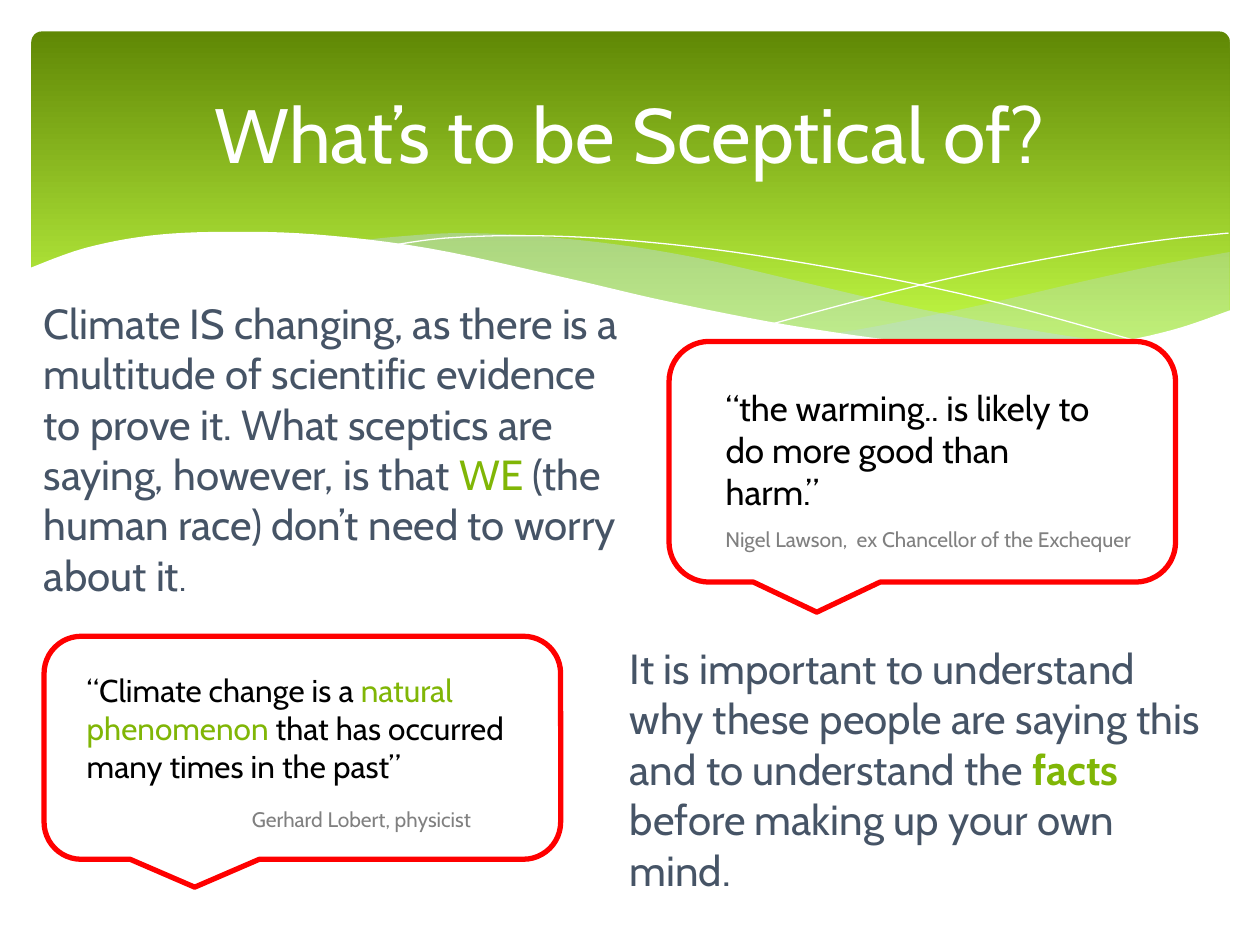
from pptx import Presentation
from pptx.dml.color import RGBColor
from pptx.enum.shapes import MSO_SHAPE as Shape
from pptx.enum.text import MSO_ANCHOR as Anchor, MSO_AUTO_SIZE as AutoSize, PP_ALIGN as Align
from pptx.oxml.ns import qn
from pptx.util import Inches, Pt
from lxml.etree import SubElement

WHITE = RGBColor(0xFF, 0xFF, 0xFF)
BLACK = RGBColor(0x00, 0x00, 0x00)
GREY = RGBColor(0x80, 0x80, 0x80)
SLATE = RGBColor(0x46, 0x54, 0x66)
GREEN = RGBColor(0x80, 0xB6, 0x06)
DARK_GREEN = RGBColor(0x60, 0x88, 0x05)
LIME = RGBColor(0xC1, 0xF9, 0x44)
PALE_BLUE = RGBColor(0xBB, 0xD7, 0xF8)
RED = RGBColor(0xFF, 0x00, 0x00)

COLUMNS, ROWS, CELL = 40, 30, 0.25

RIGHT_VEIL_TOP = [(39.04, 8), (36.84, 8.4), (34.44, 8.92), (31.16, 9.68), (28.24, 10.28), (26.44, 10.6)]
RIGHT_VEIL_BOTTOM = [(26.44, 10.6), (28.76, 10.88), (30.76, 11.04), (32.56, 11.12), (34.16, 11.04),
                     (35.56, 10.88), (36.84, 10.6), (37.96, 10.28), (39.04, 9.88)]
MIDDLE_VEIL_TOP = [(35.72, 10.92), (33.48, 10.6), (31, 10.16), (28.24, 9.6), (25.16, 8.88), (22.2, 8.2),
                   (19.56, 7.76), (16.8, 7.48), (14.44, 7.4), (12.52, 7.52), (11.44, 7.64)]
MIDDLE_VEIL_BOTTOM = [(11.44, 7.64), (14.48, 8.12), (17.96, 8.88), (22.64, 9.92), (26, 10.56),
                      (28.88, 10.96), (31.4, 11.12), (33.52, 11.12), (35.72, 10.92)]
FALLING_LINE = [(12.36, 7.8), (14.12, 7.56), (16.64, 7.48), (19.56, 7.6), (23.28, 8),
                (27.8, 8.76), (31.8, 9.64), (36.28, 10.88)]
RISING_LINE = [(24.52, 10.28), (27.8, 9.4), (31.04, 8.64), (34.64, 7.96), (37.04, 7.6), (39, 7.4)]
WHITE_WAVE = [(0.92, 8.52), (2.68, 7.88), (4.76, 7.48), (7.08, 7.36), (10, 7.44), (13.6, 7.88),
              (17.88, 8.8), (21.16, 9.56), (25.04, 10.32), (29.04, 10.88), (32.36, 11.08),
              (35, 10.92), (37.2, 10.48), (39.08, 9.84)]
WAVE_BASE = [(39.08, 13.16), (0.92, 13.16)]


def cells(*counts):
    return [Inches(count * CELL) for count in counts]


def smooth(knots, steps=6):
    padded = [knots[0], *knots, knots[-1]]
    points = [knots[0]]
    for a, b, c, d in zip(padded, padded[1:], padded[2:], padded[3:]):
        for step in range(1, steps + 1):
            t = step / steps
            points.append(tuple(
                (2 * q + (r - p) * t + (2 * p - 5 * q + 4 * r - s) * t ** 2
                 + (3 * q - p - 3 * r + s) * t ** 3) / 2
                for p, q, r, s in zip(a, b, c, d)))
    return points


class SlideBuilder:
    """Draws styled elements on the current page, measured in grid cells."""

    font = "Cabin"

    def __init__(self, deck):
        deck.slide_width, deck.slide_height = cells(COLUMNS, ROWS)
        self.page = deck.slides.add_slide(deck.slide_layouts[6])

    def banner(self, *place):
        banner = self.page.shapes.add_shape(Shape.ROUNDED_RECTANGLE, *cells(*place))
        banner.adjustments[0] = 0.03
        banner.shadow.inherit = False
        banner.line.fill.background()
        banner.fill.gradient()
        banner.fill.gradient_angle = 270
        for stop, color, position in zip(banner.fill.gradient_stops, (DARK_GREEN, LIME), (0, 0.9)):
            stop.color.rgb, stop.position = color, position

    def outline(self, points, closed):
        start, *rest = [tuple(cells(*point)) for point in points]
        builder = self.page.shapes.build_freeform(*start)
        builder.add_line_segments(rest, close=closed)
        shape = builder.convert_to_shape()
        shape.shadow.inherit = False
        return shape

    def wave(self, points, color, opacity=100):
        wave = self.outline(points, True)
        wave.line.fill.background()
        wave.fill.solid()
        wave.fill.fore_color.rgb = color
        if opacity < 100:
            tone = wave.fill._xPr.find(".//" + qn("a:srgbClr"))
            SubElement(tone, qn("a:alpha"), val=str(opacity * 1000))

    def hairline(self, knots):
        curve = self.outline(smooth(knots), False)
        curve.fill.background()
        curve.line.color.rgb = WHITE
        curve.line.width = Pt(0)

    def callout(self, *place):
        callout = self.page.shapes.add_shape(Shape.ROUNDED_RECTANGULAR_CALLOUT, *cells(*place))
        callout.shadow.inherit = False
        callout.fill.solid()
        callout.fill.fore_color.rgb = WHITE
        callout.line.color.rgb = RED
        callout.line.width = Pt(3)

    def text(self, place, size, color, *spans):
        box = self.page.shapes.add_textbox(*cells(*place))
        frame = box.text_frame
        frame.word_wrap = True
        frame.auto_size = AutoSize.SHAPE_TO_FIT_TEXT
        para = frame.paragraphs[0]
        para.font.name, para.font.size, para.font.color.rgb = self.font, Pt(size), color
        for words in spans:
            para.add_run().text = words
        return para

    def title(self, place, words):
        para = self.text(place, 44, WHITE, words)
        para.alignment = Align.CENTER
        frame = self.page.shapes[-1].text_frame
        frame.auto_size = AutoSize.NONE
        frame.vertical_anchor = Anchor.MIDDLE


def main():
    deck = Presentation()
    slide = SlideBuilder(deck)

    slide.banner(1, 1, 38.04, 10.8)
    slide.wave(smooth(RIGHT_VEIL_TOP) + smooth(RIGHT_VEIL_BOTTOM), PALE_BLUE, 29)
    slide.wave(smooth(MIDDLE_VEIL_TOP) + smooth(MIDDLE_VEIL_BOTTOM), PALE_BLUE, 40)
    slide.hairline(FALLING_LINE)
    slide.hairline(RISING_LINE)
    slide.wave(smooth(WHITE_WAVE) + WAVE_BASE, WHITE)

    slide.title((2, 1.48, 36, 5.48), "What’s to be Sceptical of?")
    claim = slide.text(
        (1, 9.24, 19.6, 10.08), 24, SLATE,
        "Climate IS changing, as there is a multitude of scientific evidence to prove it. "
        "What sceptics are saying, however, is that ", "WE",
        " (the human race) don’t need to worry about it", ".")
    claim.runs[1].font.color.rgb = GREEN
    claim.runs[3].font.size = Pt(20)
    advice = slide.text(
        (19.6, 20.2, 19.04, 8.48), 24, SLATE,
        "It is important to understand why these people are saying this and to understand the ",
        "facts ", "before making up your own mind.")
    advice.runs[1].font.color.rgb = GREEN
    advice.runs[1].font.bold = True

    slide.callout(21.24, 10.84, 16.08, 7.64)
    slide.callout(1.4, 20.2, 16.4, 7.08)
    slide.text((22.64, 12.08, 12.44, 4.44), 20, BLACK,
               "“the warming.. is likely to do more good than harm.”")
    slide.text((22.64, 16.52, 15.04, 1.2), 12, GREY, "Nigel Lawson,  ex Chancellor of the Exchequer")
    quote = slide.text((2.36, 21.12, 15.44, 4.04), 18, BLACK, "“Climate change is a ",
                       "natural phenomenon", " that has occurred many times in the past”")
    quote.runs[1].font.color.rgb = GREEN
    slide.text((7.6, 25.4, 16.76, 1.2), 12, GREY, "Gerhard Lobert, physicist")

    deck.save("out.pptx")


if __name__ == "__main__":
    main()
